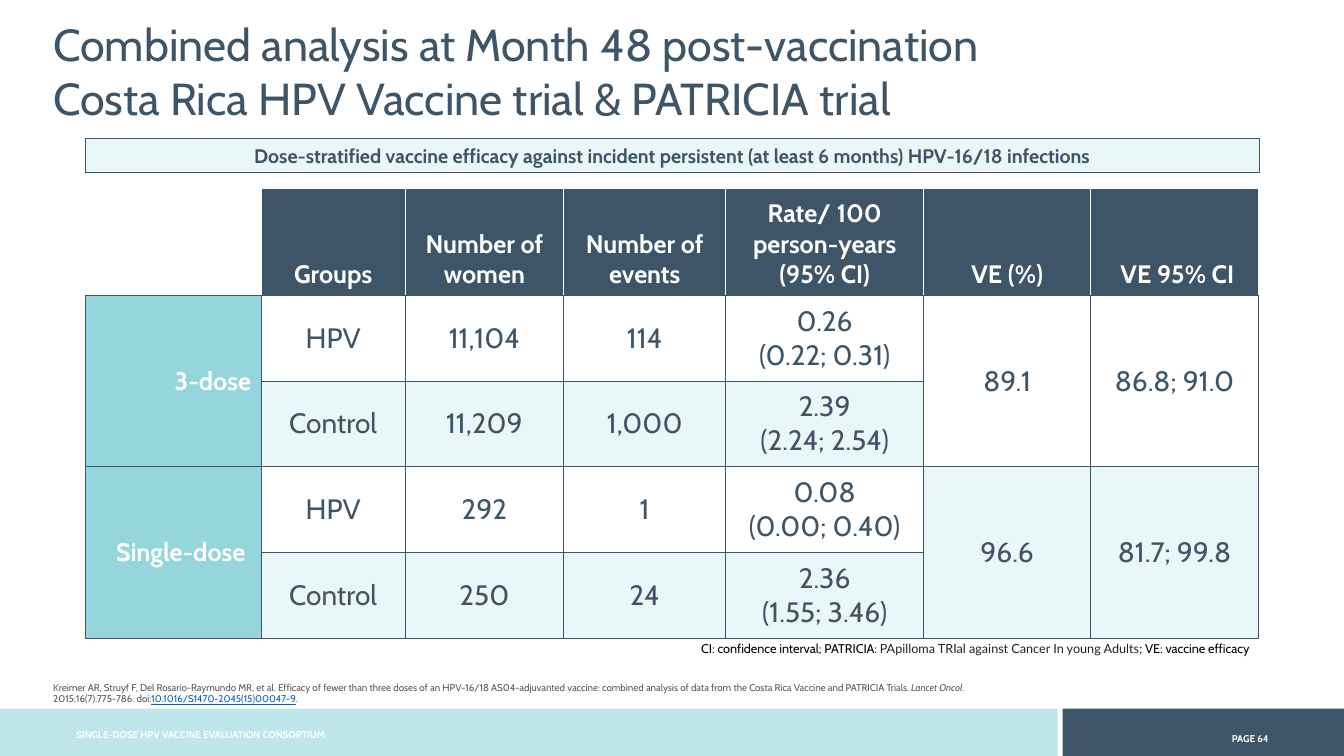
from dataclasses import dataclass

from lxml.etree import SubElement
from pptx import Presentation
from pptx.dml.color import RGBColor
from pptx.enum.shapes import MSO_SHAPE
from pptx.enum.text import MSO_ANCHOR as Anchor, PP_ALIGN as Align
from pptx.oxml.ns import qn
from pptx.util import Inches, Pt


@dataclass(frozen=True)
class Theme:
    font: str = "Cabin"
    trial_name_font: str = "Lato"
    white: str = "FFFFFF"
    black: str = "000000"
    navy: str = "3D5567"
    teal: str = "94D6DC"
    footer_teal: str = "BFE6EA"
    pale: str = "EAF7F8"
    trial_name: str = "212121"
    grey: str = "595959"
    link: str = "0563C1"
    title_size: int = 32
    value_size: int = 20
    header_size: int = 18
    banner_size: int = 14
    note_size: int = 9
    small_size: int = 7
    rule: float = 0.75
    header_rule: float = 1


THEME = Theme()

HEADERS = ["", "Groups", "Number of women", "Number of events",
           "Rate/ 100 person-years (95% CI)", "VE (%)", " VE 95% CI"]
COLUMN_WIDTHS = [1.74, 1.43, 1.57, 1.61, 1.96, 1.66, 1.66]
HEADER_HEIGHT, ROW_HEIGHT = 1.06, 0.85
# Dose, its groups, VE, VE interval, fill of the VE cells
DOSES = [
    ("3-dose",
     [("HPV", "11,104", "114", "0.26\n(0.22; 0.31)"),
      ("Control", "11,209", "1,000", "2.39\n(2.24; 2.54)")],
     "89.1", "86.8; 91.0", THEME.white),
    ("Single-dose ",
     [("HPV", "292", "1", "0.08\n(0.00; 0.40)"),
      ("Control", "250", "24", "2.36\n(1.55; 3.46)")],
     "96.6", "81.7; 99.8", THEME.pale),
]


def style_font(font, size, color, bold=False, name=THEME.font):
    font.name, font.size, font.bold = name, Pt(size), bold
    font.color.rgb = RGBColor.from_string(color)


def style_text(frame, size, color, bold=False, align=Align.LEFT):
    for paragraph in frame.paragraphs:
        paragraph.alignment = align
        for run in paragraph.runs:
            style_font(run.font, size, color, bold)


def add_text(slide, box, text, size, color, bold=False, align=Align.LEFT,
             anchor=Anchor.TOP):
    frame = slide.shapes.add_textbox(*map(Inches, box)).text_frame
    frame.word_wrap = True
    frame.vertical_anchor = anchor
    frame.text = text
    style_text(frame, size, color, bold, align)
    return frame.paragraphs[0]


def add_run(paragraph, text, size, color, name=THEME.font):
    run = paragraph.add_run()
    run.text = text
    style_font(run.font, size, color, name=name)
    return run.font


def add_bar(slide, box, fill, line=None):
    bar = slide.shapes.add_shape(MSO_SHAPE.RECTANGLE, *map(Inches, box))
    bar.shadow.inherit = False
    bar.fill.solid()
    bar.fill.fore_color.rgb = RGBColor.from_string(fill)
    if line:
        bar.line.color.rgb = RGBColor.from_string(line)
        bar.line.width = Pt(THEME.rule)
    else:
        bar.line.fill.background()
    return bar


def set_borders(cell, header):
    properties = cell._tc.get_or_add_tcPr()
    for side in ("L", "R", "T", "B"):
        white = header and side != "B"
        color = THEME.white if white else THEME.navy
        width = THEME.header_rule if white else THEME.rule
        line = SubElement(properties, qn(f"a:ln{side}"), w=str(int(Pt(width))))
        fill = SubElement(line, qn("a:solidFill"))
        SubElement(fill, qn("a:srgbClr"), val=color)


def fill_cell(cell, text, fill, size=THEME.value_size, color=THEME.navy,
              bold=False, align=Align.CENTER, anchor=Anchor.MIDDLE,
              header=False):
    set_borders(cell, header)
    cell.fill.solid()
    cell.fill.fore_color.rgb = RGBColor.from_string(fill)
    cell.vertical_anchor = anchor
    cell.text_frame.text = text
    style_text(cell.text_frame, size, color, bold, align)


def fill_merged(table, top, column, text, fill, **style):
    """Join a cell with the one below it and fill both."""
    upper, lower = table.cell(top, column), table.cell(top + 1, column)
    fill_cell(lower, "", fill)
    upper.merge(lower)
    fill_cell(upper, text, fill, **style)


def add_efficacy_table(slide):
    row_count = 1 + sum(len(groups) for _, groups, *_ in DOSES)
    height = HEADER_HEIGHT + ROW_HEIGHT * (row_count - 1)
    table = slide.shapes.add_table(
        row_count, len(HEADERS), Inches(0.85), Inches(1.87),
        Inches(sum(COLUMN_WIDTHS)), Inches(height)).table
    table.first_row = table.horz_banding = False
    for column, width in zip(table.columns, COLUMN_WIDTHS):
        column.width = Inches(width)
    for index, row in enumerate(table.rows):
        row.height = Inches(ROW_HEIGHT if index else HEADER_HEIGHT)

    label = dict(size=THEME.header_size, color=THEME.white, bold=True)
    for column, header in enumerate(HEADERS):
        fill_cell(table.cell(0, column), header,
                  THEME.navy if header else THEME.white,
                  anchor=Anchor.BOTTOM, header=True, **label)

    for dose_index, (dose, groups, efficacy, interval, fill) in enumerate(DOSES):
        top = 1 + dose_index * len(groups)
        fill_merged(table, top, 0, dose, THEME.teal, align=Align.RIGHT, **label)
        for offset, (values, shade) in enumerate(
                zip(groups, (THEME.white, THEME.pale))):
            for column, value in enumerate(values, start=1):
                fill_cell(table.cell(top + offset, column), value, shade)
        fill_merged(table, top, 5, efficacy, fill)
        fill_merged(table, top, 6, interval, fill)


def add_footer(slide):
    add_bar(slide, (0, 7.03, 10.49, 0.47), THEME.footer_teal)
    add_text(slide, (0.66, 7.18, 4.35, 0.22),
             "SINGLE-DOSE HPV VACCINE EVALUATION CONSORTIUM",
             THEME.small_size, THEME.white, True, anchor=Anchor.MIDDLE)
    add_bar(slide, (10.54, 7.03, 2.79, 0.47), THEME.navy)
    add_text(slide, (11.07, 7.22, 1.61, 0.22), "PAGE 64", THEME.small_size,
             THEME.white, True, Align.RIGHT, Anchor.MIDDLE)


def add_abbreviations(slide):
    size = THEME.note_size
    note = add_text(slide, (5.79, 6.31, 6.7, 0.25),
                    "CI: confidence interval; PATRICIA: ", size, THEME.black,
                    align=Align.RIGHT)
    add_run(note, "PApilloma TRIal against Cancer In young Adults;", size,
            THEME.trial_name, THEME.trial_name_font)
    add_run(note, " VE: vaccine efficacy", size, THEME.black)


def add_citation(slide):
    size, grey = THEME.small_size, THEME.grey
    citation = add_text(
        slide, (0.43, 6.71, 9.43, 0.34),
        "Kreimer AR, Struyf F, Del Rosario-Raymundo MR, et al. Efficacy of "
        "fewer than three doses of an HPV-16/18 AS04-adjuvanted vaccine: "
        "combined analysis of data from the Costa Rica Vaccine and PATRICIA "
        "Trials. ", size, grey)
    add_run(citation, "Lancet Oncol", size, grey).italic = True
    add_run(citation, ". 2015;16(7):775-786. doi:", size, grey)
    add_run(citation, "10.1016/S1470-2045(15)00047-9", size,
            THEME.link).underline = True
    add_run(citation, ".", size, grey)


def main():
    deck = Presentation()
    deck.slide_width, deck.slide_height = Inches(13.33), Inches(7.5)
    slide = deck.slides.add_slide(deck.slide_layouts[6])

    add_footer(slide)
    add_text(slide, (0.43, 0.12, 12.85, 1.18),
             "Combined analysis at Month 48 post-vaccination\n"
             "Costa Rica HPV Vaccine trial & PATRICIA trial",
             THEME.title_size, THEME.navy)
    banner = add_bar(slide, (0.85, 1.37, 11.64, 0.34), THEME.pale, THEME.navy)
    banner.text_frame.text = ("Dose-stratified vaccine efficacy against incident "
                              "persistent (at least 6 months) HPV-16/18 infections")
    style_text(banner.text_frame, THEME.banner_size, THEME.navy, True, Align.CENTER)
    add_efficacy_table(slide)
    add_abbreviations(slide)
    add_citation(slide)
    deck.save("out.pptx")


if __name__ == "__main__":
    main()
